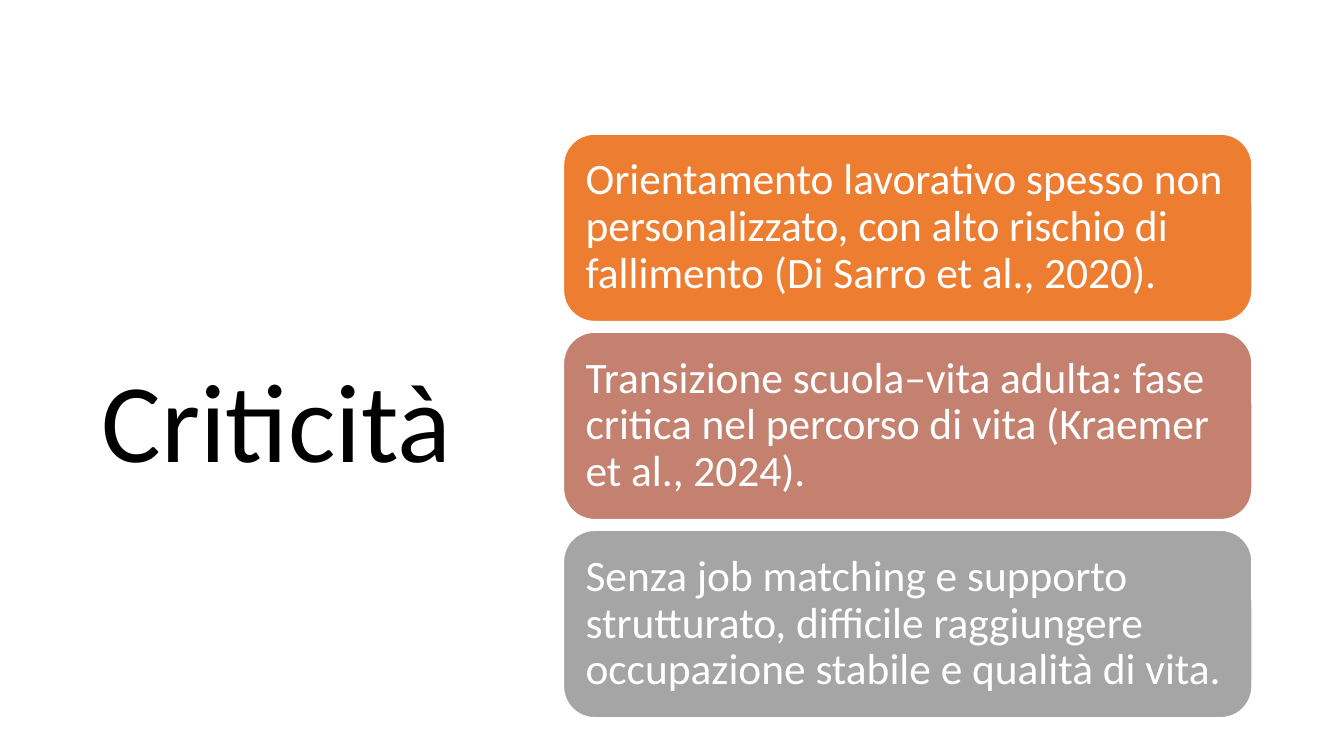
from dataclasses import dataclass

from pptx import Presentation
from pptx import util as u
from pptx.dml.color import RGBColor
from pptx.enum import shapes, text

FONT = "Calibri"
CARD_LEFT, CARD_TOP = 402.5, 95.8
CARD_WIDTH, CARD_HEIGHT, CARD_PITCH = 491.8, 133.9, 141.5
CARD_INSET = 9.3


@dataclass
class Card:
    text: str
    fill: str


CARDS = [
    Card("Orientamento lavorativo spesso non personalizzato, con alto rischio "
         "di fallimento (Di Sarro et al., 2020).", "ED7D31"),
    Card("Transizione scuola–vita adulta: fase critica nel percorso di vita "
         "(Kraemer et al., 2024).", "C48170"),
    Card("Senza job matching e supporto strutturato, difficile raggiungere "
         "occupazione stabile e qualità di vita.", "A5A5A5"),
]


def color(value: str) -> RGBColor:
    return RGBColor.from_string(value)


def set_text(sp, content: str, size: float, hex_color: str, align) -> None:
    tf = sp.text_frame
    tf.text = content
    tf.word_wrap = True
    tf.auto_size = text.MSO_AUTO_SIZE.NONE
    tf.vertical_anchor = text.MSO_ANCHOR.MIDDLE
    p = tf.paragraphs[0]
    p.alignment = align
    p.line_spacing = 0.9
    r = p.runs[0]
    r.font.name = FONT
    r.font.size = u.Pt(size)
    r.font.color.rgb = color(hex_color)


def add_title(s, content: str) -> None:
    sp = s.shapes.title
    sp.left, sp.top = u.Pt(37.4), u.Pt(84.2)
    sp.width, sp.height = u.Pt(310.3), u.Pt(439.9)
    set_text(sp, content, 80, "000000", text.PP_ALIGN.RIGHT)


def add_card(s, card: Card, index: int) -> None:
    sp = s.shapes.add_shape(
        shapes.MSO_SHAPE.ROUNDED_RECTANGLE,
        u.Pt(CARD_LEFT), u.Pt(CARD_TOP + index * CARD_PITCH),
        u.Pt(CARD_WIDTH), u.Pt(CARD_HEIGHT))
    sp.shadow.inherit = False
    sp.fill.solid()
    sp.fill.fore_color.rgb = color(card.fill)
    sp.line.color.rgb = color("FFFFFF")
    sp.line.width = u.Pt(1)
    tf = sp.text_frame
    tf.margin_left = tf.margin_right = u.Pt(CARD_INSET)
    tf.margin_top = tf.margin_bottom = u.Pt(CARD_INSET)
    set_text(sp, card.text, 31, "FFFFFF", text.PP_ALIGN.LEFT)


def main() -> None:
    prs = Presentation()
    prs.slide_width, prs.slide_height = u.Pt(960), u.Pt(540)
    s = prs.slides.add_slide(prs.slide_layouts[5])
    add_title(s, "Criticità ")
    for index, card in enumerate(CARDS):
        add_card(s, card, index)
    prs.save("out.pptx")


if __name__ == "__main__":
    main()
